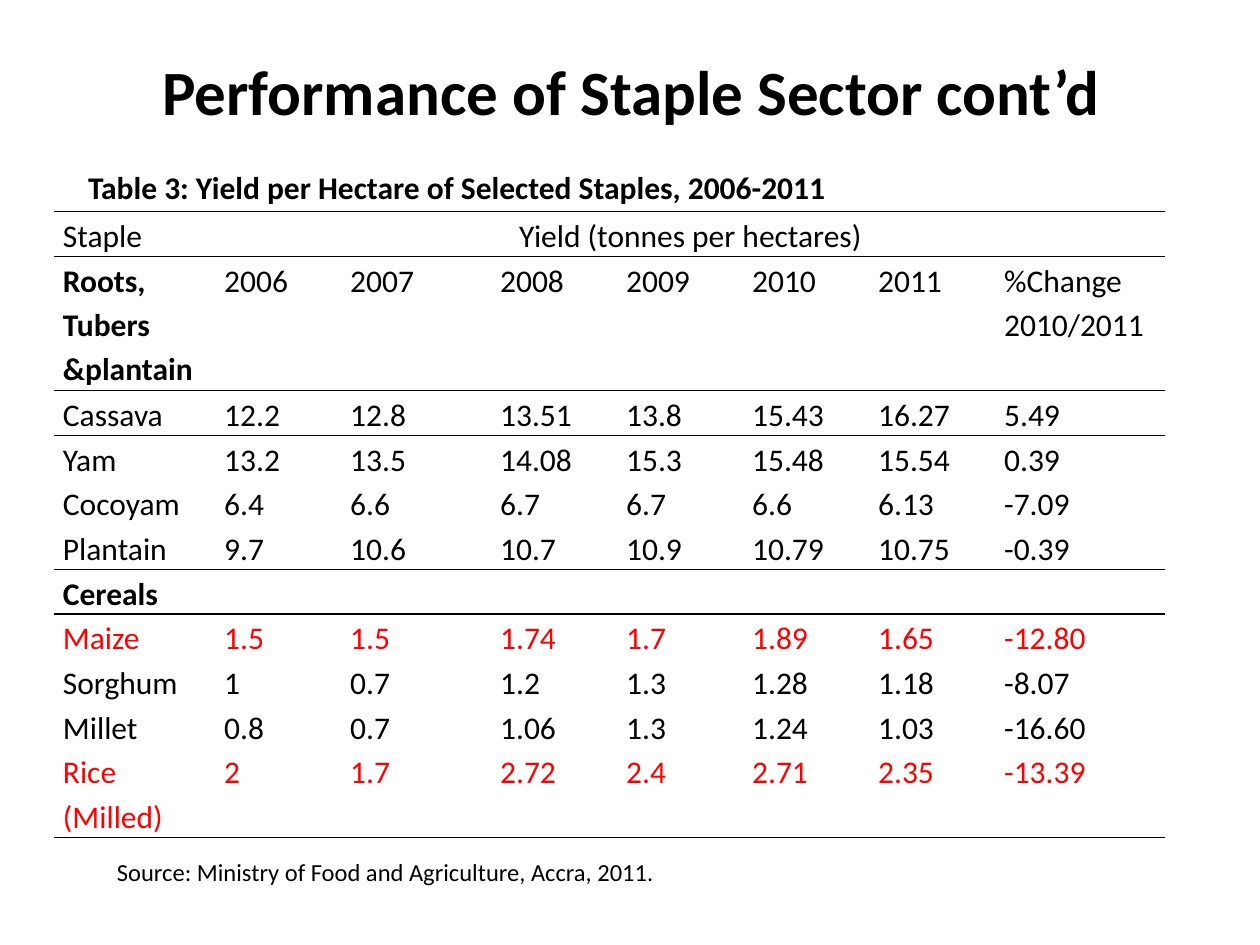
from lxml.etree import SubElement
from pptx import Presentation
from pptx.dml.color import RGBColor
from pptx.enum.text import MSO_ANCHOR as Anchor, PP_ALIGN as Align
from pptx.oxml.ns import qn
from pptx.util import Inches, Pt

FONT, BLACK, RED = "Calibri", "000000", "FF0000"
PLAIN_STYLE = "{2D5ABB26-0587-4C30-8999-92F81FD0307C}"  # no style, no grid
LINE_HEIGHT = 0.71 / 2  # one line of table text, in inches
COLUMN_WIDTHS = [1.28, 1, 1.19, 1, 1, 1, 1, 1.35]

YIELDS = [
    ["Staple", "Yield (tonnes per hectares)"],
    ["Roots, Tubers &plantain", "2006", "2007", "2008", "2009", "2010", "2011",
     "%Change 2010/2011"],
    ["Cassava", "12.2", "12.8", "13.51", "13.8", "15.43", "16.27", "5.49"],
    ["Yam", "13.2", "13.5", "14.08", "15.3", "15.48", "15.54", "0.39"],
    ["Cocoyam", "6.4", "6.6", "6.7", "6.7", "6.6", "6.13", "-7.09"],
    ["Plantain", "9.7", "10.6", "10.7", "10.9", "10.79", "10.75", "-0.39"],
    ["Cereals"],
    ["Maize", "1.5", "1.5", "1.74", "1.7", "1.89", "1.65", "-12.80"],
    ["Sorghum", "1", "0.7", "1.2", "1.3", "1.28", "1.18", "-8.07"],
    ["Millet", "0.8", "0.7", "1.06", "1.3", "1.24", "1.03", "-16.60"],
    ["Rice (Milled)", "2", "1.7", "2.72", "2.4", "2.71", "2.35", "-13.39"],
]
LINES_IN_ROW = {1: 3, 10: 2}  # rows taller than one line
RULES_ABOVE = {0, 1, 2, 6, len(YIELDS)}
GROUP_NAMES = {"Roots, Tubers &plantain", "Cereals"}
HIGHLIGHTED = {"Maize", "Rice (Milled)"}


def color(hex_code):
    return RGBColor.from_string(hex_code)


def add_run(paragraph, words, size, bold=False, ink=BLACK):
    run = paragraph.add_run()
    run.text = words
    run.font.name, run.font.size, run.font.bold = FONT, Pt(size), bold
    run.font.color.rgb = color(ink)


def add_label(slide, box, words, size, bold=False, align=Align.LEFT,
              anchor=Anchor.MIDDLE, wrap=True):
    frame = slide.shapes.add_textbox(*map(Inches, box)).text_frame
    frame.word_wrap, frame.vertical_anchor = wrap, anchor
    paragraph = frame.paragraphs[0]
    paragraph.alignment = align
    add_run(paragraph, words, size, bold, ink=BLACK)


def add_rule(cell, side):
    line = SubElement(cell._tc.get_or_add_tcPr(), qn(f"a:{side}"), w=str(Pt(1)))
    fill = SubElement(line, qn("a:solidFill"))
    SubElement(fill, qn("a:srgbClr"), val=BLACK)


def format_cell(cell, row):
    cell.margin_left = cell.margin_right = Inches(0.07)
    cell.margin_top = cell.margin_bottom = 0
    cell.text_frame.paragraphs[0].line_spacing = 1.15
    # Borders come before the fill in the cell's properties
    for side, edge in (("lnT", row), ("lnB", row + 1)):
        if edge in RULES_ABOVE:
            add_rule(cell, side)
    cell.fill.background()


def add_yield_table(slide, left, top):
    heights = [LINE_HEIGHT * LINES_IN_ROW.get(row, 1) for row in range(len(YIELDS))]
    size = (sum(COLUMN_WIDTHS), sum(heights))
    frame = slide.shapes.add_table(len(YIELDS), len(COLUMN_WIDTHS),
                                   *map(Inches, (left, top, *size)))
    table = frame.table
    table.first_row = table.horz_banding = False
    table._tbl.tblPr.find(qn("a:tableStyleId")).text = PLAIN_STYLE
    for column, width in zip(table.columns, COLUMN_WIDTHS):
        column.width = Inches(width)

    for row, (values, height) in enumerate(zip(YIELDS, heights)):
        table.rows[row].height = Inches(height)
        ink = RED if values[0] in HIGHLIGHTED else BLACK
        for cell in table.rows[row].cells:
            format_cell(cell, row)
        for column, value in enumerate(values):
            paragraph = table.cell(row, column).text_frame.paragraphs[0]
            add_run(paragraph, value, 18, value in GROUP_NAMES, ink)

    # The yield heading spans the years and the change
    heading = table.cell(0, 1)
    heading.merge(table.cell(0, len(COLUMN_WIDTHS) - 1))
    heading.text_frame.paragraphs[0].alignment = Align.CENTER


def main():
    deck = Presentation()
    deck.slide_width, deck.slide_height = Inches(10), Inches(7.5)
    slide = deck.slides.add_slide(deck.slide_layouts[6])

    # Title
    add_label(slide, (0.51, 0.21, 9, 1.02), "Performance of Staple Sector cont’d",
              36, bold=True, align=Align.CENTER)
    # Table with its caption and source
    add_yield_table(slide, 0.43, 1.68)
    add_label(slide, (0.6, 1.28, 7.01, 0.4),
              "Table 3: Yield per Hectare of Selected Staples, 2006-2011", 18, bold=True)
    add_label(slide, (0.83, 6.75, 4.5, 0.34),
              "Source: Ministry of Food and Agriculture, Accra, 2011.", 14,
              anchor=Anchor.TOP, wrap=False)

    deck.save("out.pptx")


if __name__ == "__main__":
    main()
